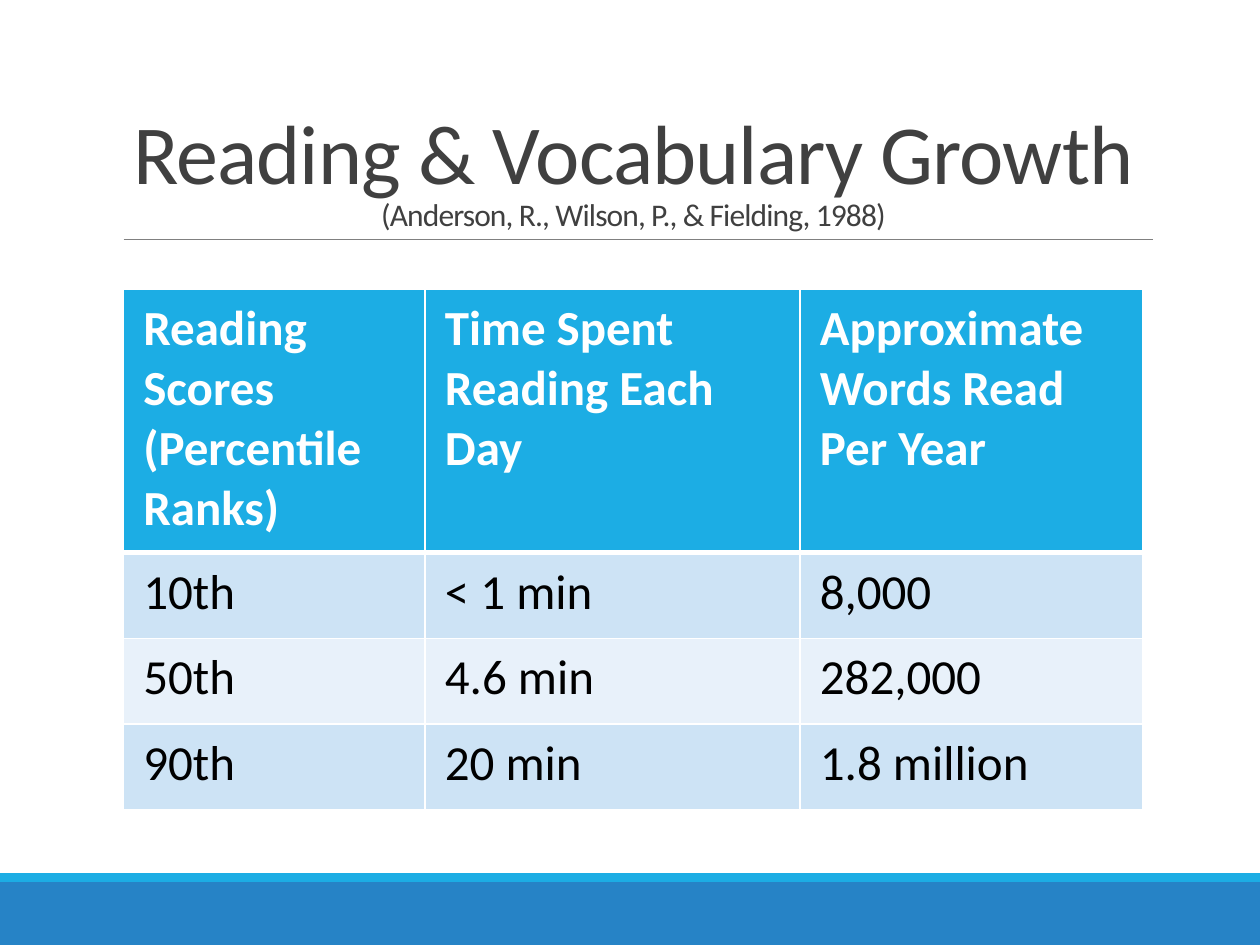
from dataclasses import dataclass

from lxml import etree
from pptx import Presentation
from pptx.dml.color import RGBColor
from pptx.enum.shapes import MSO_CONNECTOR, MSO_SHAPE
from pptx.enum.text import MSO_ANCHOR, PP_ALIGN
from pptx.oxml.ns import qn
from pptx.util import Cm, Pt

RECTANGLE = MSO_SHAPE.RECTANGLE
STRAIGHT = MSO_CONNECTOR.STRAIGHT
BOTTOM = MSO_ANCHOR.BOTTOM
CENTER = PP_ALIGN.CENTER

FONT = "Calibri"
COLORS = {
    "footer": "2683C6",
    "accent": "1CADE4",
    "rule": "808080",
    "title": "404040",
    "white": "FFFFFF",
    "black": "000000",
    "band_dark": "CDE3F5",
    "band_light": "E8F1FA",
}
COLUMN_WIDTHS = (6.08, 7.56, 6.91)
HEADER_HEIGHT, BODY_HEIGHT = 5.31, 1.73


@dataclass
class Band:
    top: float
    height: float
    color: str


@dataclass
class TitleLine:
    text: str
    size: int


@dataclass
class TableRow:
    texts: tuple[str, str, str]
    fill: str
    color: str = "black"
    bold: bool = False
    top_border: float = 1
    bottom_border: float = 1


BANDS = (Band(17.78, 1.27, "footer"), Band(17.6, 0.18, "accent"))
TITLE = (
    TitleLine("Reading & Vocabulary Growth", 48),
    TitleLine("(Anderson, R., Wilson, P., & Fielding, 1988)", 18),
)
ROWS = (
    TableRow(
        ("Reading Scores (Percentile Ranks)", "Time Spent Reading Each Day",
         "Approximate Words Read Per Year"),
        "accent", "white", bold=True, bottom_border=3,
    ),
    TableRow(("10th", "< 1 min", "8,000"), "band_dark", top_border=3),
    TableRow(("50th", "4.6 min", "282,000"), "band_light"),
    TableRow(("90th", "20 min", "1.8 million"), "band_dark"),
)


def rgb(name: str) -> RGBColor:
    return RGBColor.from_string(COLORS[name])


def add_band(page, band: Band, width: int) -> None:
    shape = page.shapes.add_shape(RECTANGLE, 0, Cm(band.top), width, Cm(band.height))
    shape.shadow.inherit = False
    shape.fill.solid()
    shape.fill.fore_color.rgb = rgb(band.color)
    shape.line.fill.background()


def add_rule(page) -> None:
    rule = page.shapes.add_connector(STRAIGHT, Cm(2.49), Cm(4.83), Cm(23.24), Cm(4.83))
    rule.line.color.rgb = rgb("rule")
    rule.line.width = Pt(0.5)
    etree.SubElement(rule._element.spPr, qn("a:effectLst"))


def add_title(page, lines: tuple[TitleLine, ...]) -> None:
    box = page.shapes.add_textbox(Cm(2.29), Cm(0.79), Cm(20.96), Cm(4.04))
    frame = box.text_frame
    frame.word_wrap = True
    frame.vertical_anchor = BOTTOM
    para = frame.paragraphs[0]
    para.alignment = CENTER
    para.line_spacing = 0.85
    para.font.name = FONT
    para.font.color.rgb = rgb("title")
    for index, line in enumerate(lines):
        if index:
            para.add_line_break()
        span = para.add_run()
        span.text = line.text
        span.font.size = Pt(line.size)
        span._r.get_or_add_rPr().set("spc", "-50")


def set_borders(cell, row: TableRow) -> None:
    """Draw white borders; call before filling, as the schema puts lines first."""
    properties = cell._tc.get_or_add_tcPr()
    widths = {"lnL": 1, "lnR": 1, "lnT": row.top_border, "lnB": row.bottom_border}
    for tag, width in widths.items():
        line = etree.SubElement(properties, qn(f"a:{tag}"), w=str(Pt(width)))
        fill = etree.SubElement(line, qn("a:solidFill"))
        etree.SubElement(fill, qn("a:srgbClr"), val=COLORS["white"])


def fill_cell(cell, text: str, row: TableRow) -> None:
    set_borders(cell, row)
    cell.fill.solid()
    cell.fill.fore_color.rgb = rgb(row.fill)
    cell.margin_left = cell.margin_right = Cm(0.4)
    cell.margin_top = cell.margin_bottom = Cm(0.2)
    cell.text = text
    font = cell.text_frame.paragraphs[0].font
    font.name = FONT
    font.size = Pt(28)
    font.bold = row.bold
    font.color.rgb = rgb(row.color)


def add_reading_table(page, rows: tuple[TableRow, ...]) -> None:
    heights = [HEADER_HEIGHT] + [BODY_HEIGHT] * (len(rows) - 1)
    table = page.shapes.add_table(
        len(rows), len(COLUMN_WIDTHS), Cm(2.49), Cm(5.83),
        Cm(sum(COLUMN_WIDTHS)), Cm(sum(heights)),
    ).table
    for column, width in zip(table.columns, COLUMN_WIDTHS):
        column.width = Cm(width)
    for table_row, height, row in zip(table.rows, heights, rows):
        table_row.height = Cm(height)
        for cell, text in zip(table_row.cells, row.texts):
            fill_cell(cell, text, row)


def main() -> None:
    deck = Presentation()
    deck.slide_width, deck.slide_height = Cm(25.4), Cm(19.05)
    page = deck.slides.add_slide(deck.slide_layouts[6])
    for band in BANDS:
        add_band(page, band, deck.slide_width)
    add_rule(page)
    add_title(page, TITLE)
    add_reading_table(page, ROWS)
    deck.save("out.pptx")


if __name__ == "__main__":
    main()
